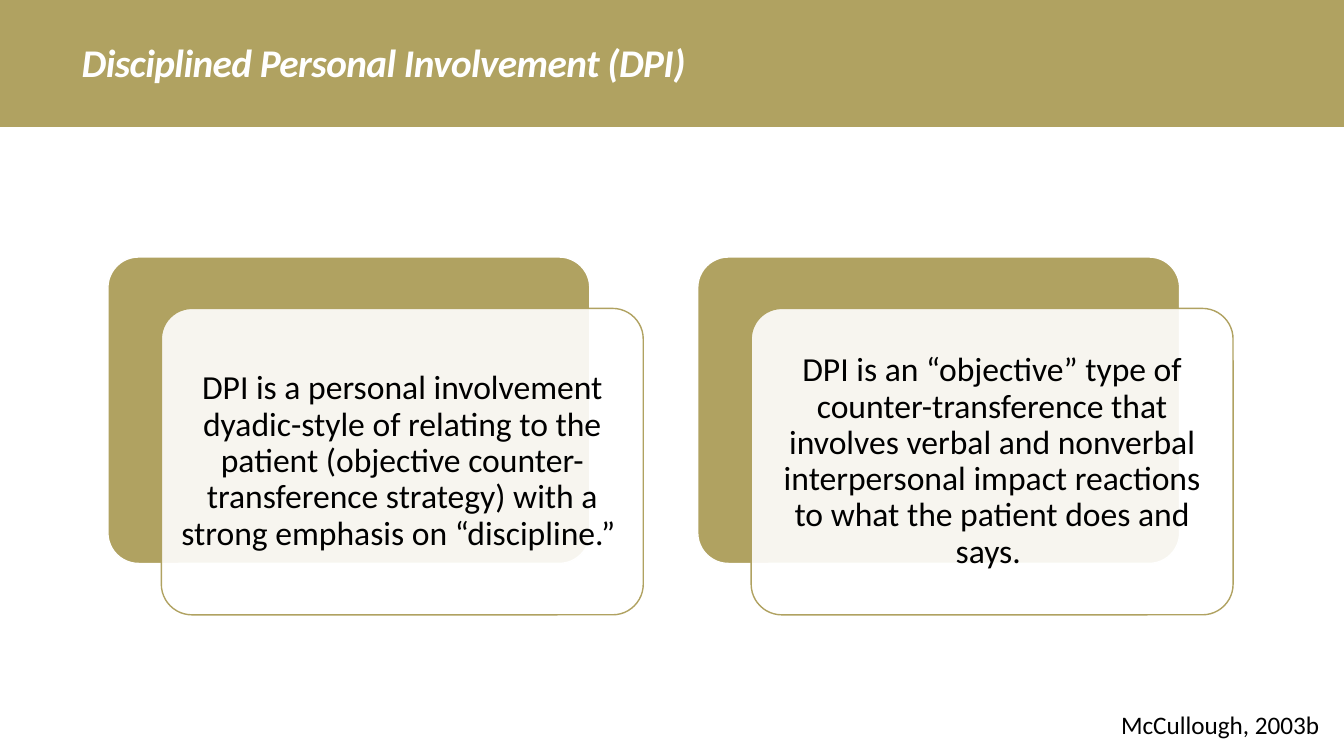
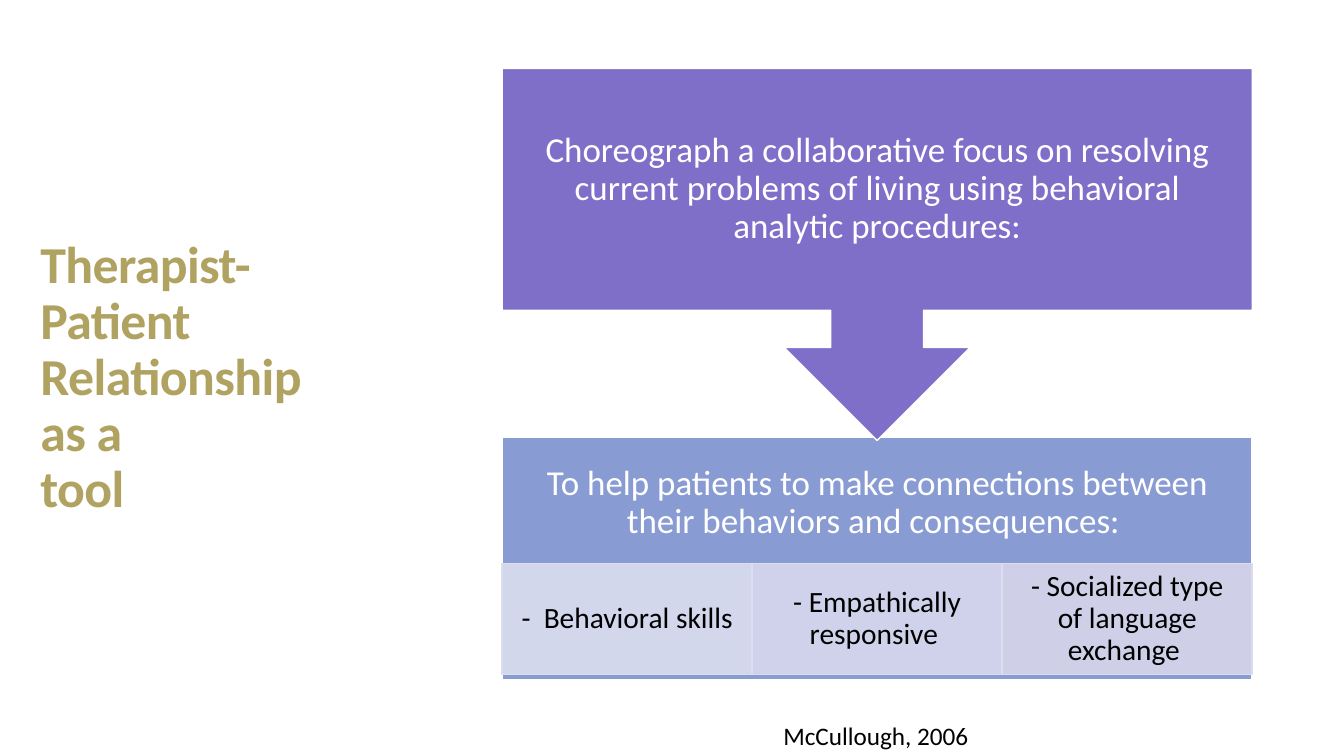
"""Build two slides on disciplined personal involvement and the therapist-patient relationship."""
from copy import deepcopy
from dataclasses import dataclass
from typing import Optional

from lxml.etree import SubElement
from pptx import Presentation
from pptx.dml.color import RGBColor
from pptx.enum.shapes import MSO_SHAPE
from pptx.enum.text import MSO_ANCHOR, MSO_AUTO_SIZE, PP_ALIGN
from pptx.oxml.ns import qn
from pptx.presentation import Presentation as PresentationType
from pptx.shapes.base import BaseShape
from pptx.slide import Slide
from pptx.util import Emu, Pt

FONT = "Calibri"
EMU_PER_PX = 9144
SLIDE_WIDTH, SLIDE_HEIGHT = 1333, 750
TITLE_ONLY_LAYOUT = 5

GOLD = RGBColor(0xB0, 0xA2, 0x61)
PURPLE = RGBColor(0x80, 0x6F, 0xC9)
BLUE = RGBColor(0x89, 0x9B, 0xD3)
PALE_BLUE = RGBColor(0xDA, 0xDE, 0xEF)
PALE_INDIGO = RGBColor(0xD7, 0xD8, 0xED)
PALE_PURPLE = RGBColor(0xD8, 0xD5, 0xEB)
WHITE = RGBColor(0xFF, 0xFF, 0xFF)
BLACK = RGBColor(0x00, 0x00, 0x00)


@dataclass(frozen=True)
class Box:
    """A rectangle in px."""

    left: int
    top: int
    width: int
    height: int

    def shifted(self, right: int = 0, down: int = 0) -> "Box":
        """Return the same rectangle moved by the given distances."""
        return Box(self.left + right, self.top + down, self.width, self.height)

    def emu(self) -> tuple[Emu, Emu, Emu, Emu]:
        """Return left, top, width and height in EMU."""
        return px(self.left), px(self.top), px(self.width), px(self.height)


@dataclass(frozen=True)
class Skill:
    """One cell in the row of skills."""

    text: str
    fill: RGBColor


CARD = Box(107, 255, 478, 304)
CARD_PITCH = 585
CARD_OFFSET = 53, 51
CARD_TEXTS = (
    "DPI is a personal involvement dyadic-style of relating to the patient "
    "(objective counter-transference strategy) with a strong emphasis on “discipline.” ",
    "DPI is an “objective” type of counter-transference that involves verbal and nonverbal "
    "interpersonal impact reactions to what the patient does and says. ",
)

CALLOUT = Box(498, 68, 744, 369)
GOAL = Box(498, 434, 744, 240)
SKILL = Box(498, 559, 248, 110)
SKILLS = (
    Skill("-  Behavioral skills", PALE_BLUE),
    Skill("- Empathically responsive ", PALE_INDIGO),
    Skill("- Socialized type of language exchange ", PALE_PURPLE),
)


def px(length: int) -> Emu:
    """Turn px into EMU."""
    return Emu(length * EMU_PER_PX)


def set_text(
    shape: BaseShape,
    text: str,
    *,
    size: int,
    color: RGBColor = BLACK,
    bold: bool = False,
    italic: bool = False,
    align: PP_ALIGN = PP_ALIGN.CENTER,
    anchor: MSO_ANCHOR = MSO_ANCHOR.MIDDLE,
    margins: tuple[int, int, int, int] = (10, 5, 10, 5),
    line_spacing: float = 0.9,
    tracking: int = 0,
) -> None:
    """Write one formatted paragraph into a shape."""
    frame = shape.text_frame
    frame.word_wrap = True
    frame.auto_size = MSO_AUTO_SIZE.NONE
    frame.vertical_anchor = anchor
    frame.margin_left, frame.margin_top, frame.margin_right, frame.margin_bottom = map(px, margins)
    paragraph = frame.paragraphs[0]
    paragraph.text = text
    paragraph.alignment = align
    paragraph.line_spacing = line_spacing
    for run in paragraph.runs:
        font = run.font
        font.name, font.size, font.bold, font.italic = FONT, Pt(size), bold, italic
        font.color.rgb = color
        properties = run._r.get_or_add_rPr()
        if tracking:
            properties.set("spc", str(tracking))
    for line_break in paragraph._p.findall(qn("a:br")):
        line_break.append(deepcopy(properties))


def set_opacity(shape: BaseShape, percent: int) -> None:
    """Make the fill of a shape partly transparent."""
    color = shape._element.spPr.find(qn("a:solidFill"))[0]
    SubElement(color, qn("a:alpha")).set("val", str(percent * 1000))


def add_panel(
    slide: Slide,
    kind: MSO_SHAPE,
    box: Box,
    fill: RGBColor,
    line: Optional[RGBColor] = WHITE,
    opacity: int = 100,
) -> BaseShape:
    """Add a filled preset shape without a shadow."""
    shape = slide.shapes.add_shape(kind, *box.emu())
    shape.shadow.inherit = False
    shape.fill.solid()
    shape.fill.fore_color.rgb = fill
    if line is None:
        shape.line.fill.background()
    else:
        shape.line.color.rgb = line
        shape.line.width = Pt(1)
    if opacity < 100:
        set_opacity(shape, opacity)
    if kind == MSO_SHAPE.ROUNDED_RECTANGLE:
        shape.adjustments[0] = 0.1
    return shape


def add_titled_slide(
    presentation: PresentationType, text: str, box: Box, size: int, color: RGBColor, italic: bool = False
) -> Slide:
    """Add a title-only slide and format its title."""
    slide = presentation.slides.add_slide(presentation.slide_layouts[TITLE_ONLY_LAYOUT])
    title = slide.shapes.title
    title.left, title.top, title.width, title.height = box.emu()
    set_text(title, text, size=size, color=color, bold=True, italic=italic, align=PP_ALIGN.LEFT, tracking=-40)
    return slide


def add_citation(slide: Slide, text: str, left: int, top: int) -> None:
    """Add the source citation near the bottom edge."""
    citation = slide.shapes.add_textbox(*Box(left, top, 231, 40).emu())
    set_text(citation, text, size=18, align=PP_ALIGN.LEFT, anchor=MSO_ANCHOR.TOP, line_spacing=1.0)


def build_involvement_slide(presentation: PresentationType) -> None:
    """Build the slide with two layered cards."""
    slide = add_titled_slide(
        presentation, "Disciplined Personal Involvement (DPI)", Box(71, 21, 1154, 86), 28, WHITE, italic=True
    )
    band = add_panel(slide, MSO_SHAPE.RECTANGLE, Box(0, 0, SLIDE_WIDTH, 126), GOLD, line=None)
    slide.shapes.title.element.addprevious(band.element)
    for index, text in enumerate(CARD_TEXTS):
        back = CARD.shifted(index * CARD_PITCH)
        add_panel(slide, MSO_SHAPE.ROUNDED_RECTANGLE, back, GOLD)
        front = add_panel(slide, MSO_SHAPE.ROUNDED_RECTANGLE, back.shifted(*CARD_OFFSET), WHITE, GOLD, opacity=90)
        set_text(front, text, size=24, margins=(10, 10, 10, 10))
    add_citation(slide, "McCullough, 2003b", 1102, 699)


def build_relationship_slide(presentation: PresentationType) -> None:
    """Build the slide with a callout leading to a goal and its skills."""
    slide = add_titled_slide(
        presentation, "Therapist-\nPatient \nRelationship \nas a\ntool", Box(30, 105, 412, 541), 37, GOLD
    )
    goal = add_panel(slide, MSO_SHAPE.RECTANGLE, GOAL, BLUE)
    set_text(
        goal,
        "To help patients to make connections between their behaviors and consequences: ",
        size=25,
        color=WHITE,
        margins=(19, 19, 19, 19 + SKILL.height),
    )
    for index, skill in enumerate(SKILLS):
        box = SKILL.shifted(index * SKILL.width)
        cell = add_panel(slide, MSO_SHAPE.RECTANGLE, box, skill.fill, PALE_BLUE, opacity=90)
        set_text(cell, skill.text, size=21, margins=(16, 3, 16, 3))
    callout = add_panel(slide, MSO_SHAPE.DOWN_ARROW_CALLOUT, CALLOUT, PURPLE)
    set_text(
        callout,
        "Choreograph a collaborative focus on resolving current problems of living using "
        "behavioral analytic procedures:",
        size=25,
        color=WHITE,
        margins=(19, 19, 19, 19),
    )
    add_citation(slide, "McCullough, 2006", 767, 710)


def main() -> None:
    """Build and save the presentation."""
    presentation = Presentation()
    presentation.slide_width, presentation.slide_height = px(SLIDE_WIDTH), px(SLIDE_HEIGHT)
    build_involvement_slide(presentation)
    build_relationship_slide(presentation)
    presentation.save("out.pptx")


if __name__ == "__main__":
    main()
